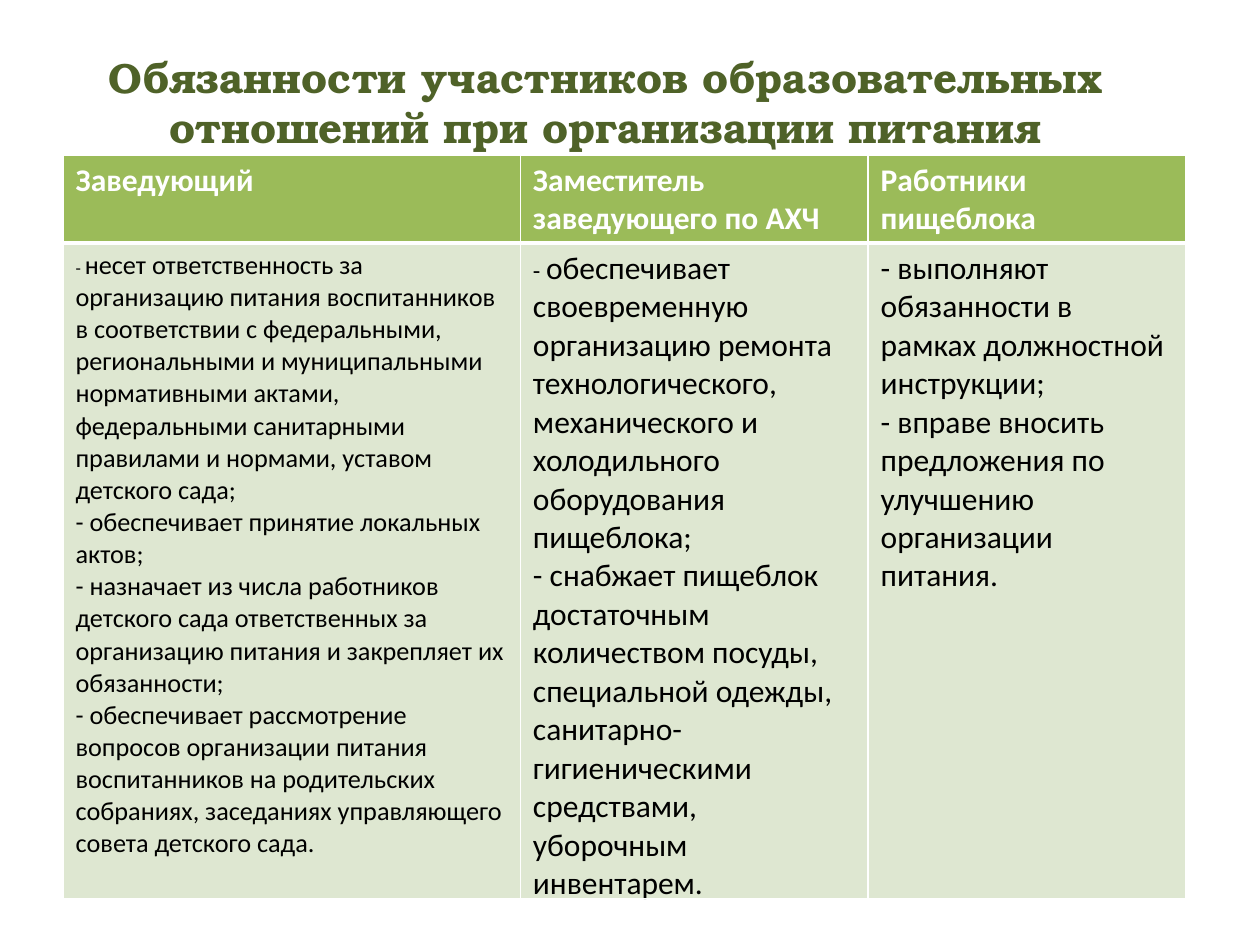
import pptx
import pptx.dml.color
import pptx.enum.text
import pptx.oxml
import pptx.oxml.ns
import pptx.util
from pptx.util import Cm

THEME = {
    "title_font": "TeX Gyre Bonum", "body_font": "Calibri",
    "title": "4F6228", "header_text": "FFFFFF", "body_text": "000000",
    "header_fill": "9BBB59", "body_fill": "DEE7D1", "border": "FFFFFF",
    "title_size": 24, "header_size": 18, "thin": 1, "thick": 3,
}

TITLE = "Обязанности участников образовательных отношений при организации питания"

# Each column: heading, width in cm, size of the first dash, size of the text, duties
COLUMNS = [
    ("Заведующий", 9.22, 10, 15, [
        "несет ответственность за организацию питания воспитанников в соответствии "
        "с федеральными, региональными и муниципальными нормативными актами, "
        "федеральными санитарными правилами и нормами, уставом детского сада;",
        "обеспечивает принятие локальных актов;",
        "назначает из числа работников детского сада ответственных за организацию "
        "питания и закрепляет их обязанности;",
        "обеспечивает рассмотрение вопросов организации питания воспитанников на "
        "родительских собраниях, заседаниях управляющего совета детского сада.",
    ]),
    ("Заместитель заведующего по АХЧ", 7.01, 14, 18, [
        "обеспечивает своевременную организацию ремонта технологического, "
        "механического и холодильного оборудования пищеблока;",
        "снабжает пищеблок достаточным количеством посуды, специальной одежды, "
        "санитарно-гигиеническими средствами, уборочным инвентарем.",
    ]),
    ("Работники пищеблока", 6.4, 18, 18, [
        "выполняют обязанности в рамках должностной инструкции;",
        "вправе вносить предложения по улучшению организации питания.",
    ]),
]
ROW_HEIGHTS = [1.68, 12.93]
TABLE_LEFT, TABLE_TOP = 1.27, 3.12


def add_text(para, text, size, color, font=THEME["body_font"], bold=False):
    span = para.add_run()
    span.text = text
    span.font.size = pptx.util.Pt(size)
    span.font.name = font
    span.font.bold = bold
    span.font.color.rgb = pptx.dml.color.RGBColor.from_string(color)


def style_cell(cell, fill, top, bottom):
    """Borders go in before the fill, as the schema orders them."""
    properties = cell._tc.get_or_add_tcPr()
    thin = THEME["thin"]
    for side, width in (("L", thin), ("R", thin), ("T", top), ("B", bottom)):
        properties.append(pptx.oxml.parse_xml(
            f'<a:ln{side} {pptx.oxml.ns.nsdecls("a")} w="{pptx.util.Pt(width)}">'
            f'<a:solidFill><a:srgbClr val="{THEME["border"]}"/></a:solidFill></a:ln{side}>'))
    cell.fill.solid()
    cell.fill.fore_color.rgb = pptx.dml.color.RGBColor.from_string(fill)


def add_title(page):
    box = page.shapes.add_textbox(Cm(0.51), Cm(0.91), Cm(23.39), Cm(2.21))
    box.text_frame.word_wrap = True
    para = box.text_frame.paragraphs[0]
    para.alignment = pptx.enum.text.PP_ALIGN.CENTER
    add_text(para, TITLE, THEME["title_size"], THEME["title"],
             font=THEME["title_font"], bold=True)


def add_duties(frame, duties, dash_size, size):
    for index, duty in enumerate(duties):
        para = frame.add_paragraph() if index else frame.paragraphs[0]
        if index == 0 and dash_size != size:
            add_text(para, "- ", dash_size, THEME["body_text"])
            add_text(para, duty, size, THEME["body_text"])
        else:
            add_text(para, "- " + duty, size, THEME["body_text"])


def add_duty_table(page):
    width = sum(column[1] for column in COLUMNS)
    table = page.shapes.add_table(
        len(ROW_HEIGHTS), len(COLUMNS), Cm(TABLE_LEFT), Cm(TABLE_TOP),
        Cm(width), Cm(sum(ROW_HEIGHTS))).table
    table.horz_banding = False
    for row, height in zip(table.rows, ROW_HEIGHTS):
        row.height = Cm(height)
    for index, (heading, column_width, dash_size, size, duties) in enumerate(COLUMNS):
        table.columns[index].width = Cm(column_width)
        header, body = table.cell(0, index), table.cell(1, index)
        style_cell(header, THEME["header_fill"], THEME["thin"], THEME["thick"])
        style_cell(body, THEME["body_fill"], THEME["thick"], THEME["thin"])
        add_text(header.text_frame.paragraphs[0], heading, THEME["header_size"],
                 THEME["header_text"], bold=True)
        add_duties(body.text_frame, duties, dash_size, size)


def main():
    deck = pptx.Presentation()
    deck.slide_width, deck.slide_height = Cm(25.4), Cm(19.05)
    page = deck.slides.add_slide(deck.slide_layouts[6])
    add_title(page)
    add_duty_table(page)
    deck.save("out.pptx")


if __name__ == "__main__":
    main()
